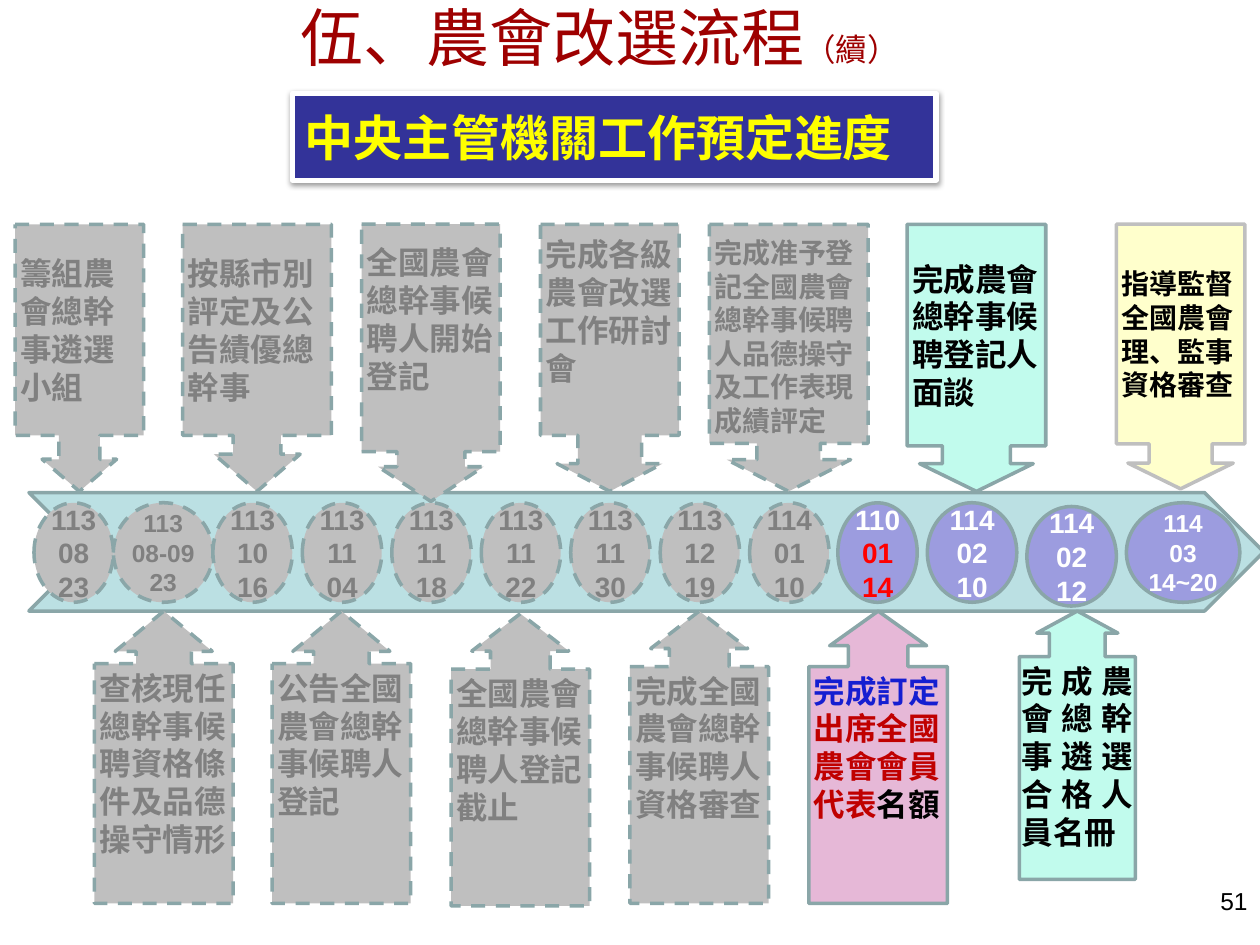
from dataclasses import dataclass
from lxml import etree
from pptx import Presentation
from pptx.dml.color import RGBColor
from pptx.enum.dml import MSO_LINE
from pptx.enum.shapes import MSO_SHAPE
from pptx.enum.text import MSO_ANCHOR, PP_ALIGN
from pptx.oxml.ns import qn
from pptx.util import Inches, Pt

DOWN, UP = MSO_SHAPE.DOWN_ARROW_CALLOUT, MSO_SHAPE.UP_ARROW_CALLOUT
OVAL, CHEVRON, RECTANGLE = MSO_SHAPE.OVAL, MSO_SHAPE.CHEVRON, MSO_SHAPE.RECTANGLE
TOP, MIDDLE = MSO_ANCHOR.TOP, MSO_ANCHOR.MIDDLE
LEFT, CENTER, RIGHT, JUSTIFY = PP_ALIGN.LEFT, PP_ALIGN.CENTER, PP_ALIGN.RIGHT, PP_ALIGN.JUSTIFY
DASH = MSO_LINE.DASH

PAST, PAST_TEXT, PURPLE, MINT, EDGE = "BFBFBF", "808080", "9C9CDF", "C1FBED", "8AA6A8"
BLACK, WHITE, RED = "000000", "FFFFFF", "FF0000"

DATES = [(0.27, 0.63, "113 08 23"), (0.9, 0.79, "113 08-09 23")]
DATES += [(1.69 + 0.71 * index, 0.63, date) for index, date in enumerate(
    ["113 10 16", "113 11 04", "113 11 18", "113 11 22", "113 11 30", "113 12 19", "114 01 10"])]
UPCOMING = [
    (6.65, 3.99, 0.63, "110 01 14", 16, [WHITE, RED, RED]),
    (7.36, 3.99, 0.71, "114 02 10", 16, [WHITE]),
    (8.15, 4.02, 0.71, "114 02 12", 16, [WHITE]),
    (8.94, 3.99, 0.9, "114 03 14~20", 14, [WHITE]),
]
PAST_ABOVE = [
    (0.12, 1.02, 2.12, (0.32, 0.29, 0.25, 0.79), "籌組農會總幹事遴選小組", 18, 0.04, 0.04),
    (1.45, 1.18, 2.12, (0.32, 0.29, 0.25, 0.79), "按縣市別評定及公告績優總幹事", 18, 0.04, 0.04),
    (2.87, 1.1, 2.2, (0.49, 0.38, 0.25, 0.82), "全國農會總幹事候聘人開始登記", 18, 0.04, 0.34),
    (4.29, 1.1, 2.12, (0.46, 0.38, 0.2, 0.79), "完成各級農會改選工作研討會", 18, 0.04, 0.34),
    (5.63, 1.26, 2.12, (0.4, 0.39, 0.2, 0.82),
     "完成准予登記全國農會總幹事候聘人品德操守及工作表現成績評定", 16, 0.08, 0.04),
]
PAST_BELOW = [
    (0.75, 4.85, (0.4, 0.35, 0.29, 0.82), "查核現任總幹事候聘資格條件及品德操守情形"),
    (2.16, 4.85, (0.4, 0.35, 0.29, 0.82), "公告全國農會總幹事候聘人登記"),
    (3.58, 4.87, (0.43, 0.35, 0.27, 0.81), "全國農會總幹事候聘人登記截止"),
    (5, 4.85, (0.43, 0.35, 0.27, 0.81), "完成全國農會總幹事候聘人資格審查"),
]


def color(value):
    return RGBColor.from_string(value)


@dataclass
class SlideBuilder:
    """Hold the fonts and the current slide, and draw each kind of element."""
    slide: object
    latin: str = "Arial"
    chinese: str = "Noto Sans CJK SC"

    def style(self, paragraph, size, text_color, font_name, bold=True, align=LEFT):
        paragraph.alignment = align
        font = paragraph.font
        font.size, font.bold = Pt(size), bold
        font.color.rgb = color(text_color)
        font.name = font_name
        etree.SubElement(font._element, qn("a:ea"), typeface=font_name)

    def frame(self, shape, anchor, margins):
        text_frame = shape.text_frame
        text_frame.word_wrap, text_frame.vertical_anchor = True, anchor
        (text_frame.margin_left, text_frame.margin_top,
         text_frame.margin_right, text_frame.margin_bottom) = map(Inches, margins)
        return text_frame

    def shape(self, kind, box, fill, edge=EDGE, width=2, dashed=False):
        shape = self.slide.shapes.add_shape(kind, *map(Inches, box))
        shape.shadow.inherit = False
        shape.fill.solid()
        shape.fill.fore_color.rgb = color(fill)
        shape.line.color.rgb = color(edge)
        shape.line.width = Pt(width)
        if dashed:
            shape.line.dash_style = DASH
        return shape

    def title(self, text, suffix):
        title = self.slide.shapes.title
        title.left, title.top, title.width, title.height = map(Inches, (0.98, -0.07, 7.56, 0.71))
        paragraph = self.frame(title, MIDDLE, (0.1, 0.05, 0.1, 0.05)).paragraphs[0]
        self.style(paragraph, 36, "9E0000", self.chinese, False, CENTER)
        paragraph.add_run().text = text
        run = paragraph.add_run()
        run.text, run.font.size = suffix, Pt(18)

    def banner(self, text):
        shape = self.shape(RECTANGLE, (2.32, 0.74, 5.11, 0.69), "333399", WHITE, 3)
        effects = shape._element.spPr.find(qn("a:effectLst"))
        shadow = etree.SubElement(effects, qn("a:outerShdw"), blurRad=str(Pt(3.1)),
                                  dist=str(Pt(1.6)), dir="5400000", rotWithShape="0")
        shade = etree.SubElement(shadow, qn("a:srgbClr"), val=BLACK)
        etree.SubElement(shade, qn("a:alpha"), val="38000")
        paragraph = self.frame(shape, MIDDLE, (0.1, 0.05, 0.1, 0.05)).paragraphs[0]
        paragraph.text = text
        self.style(paragraph, 28, "FFFF00", self.chinese)

    def date(self, box, date, fill, colors, size=16, dashed=False):
        shape = self.shape(OVAL, box, fill, dashed=dashed)
        text_frame = self.frame(shape, MIDDLE, (0.02, 0.01, 0.02, 0.01))
        text_frame.text = date.replace(" ", "\n")
        for index, paragraph in enumerate(text_frame.paragraphs):
            self.style(paragraph, size, colors[index % len(colors)], self.latin, align=CENTER)
            paragraph.line_spacing = Pt(size * 1.2)

    def callout(self, kind, box, adjustments, parts, fill, size=18, edge=EDGE, dashed=False,
                margins=(0.04, 0.04, 0.04, 0.04), align=LEFT):
        shape = self.shape(kind, box, fill, edge, dashed=dashed)
        for index, value in enumerate(adjustments):
            shape.adjustments[index] = value
        paragraph = self.frame(shape, MIDDLE if kind == DOWN else TOP, margins).paragraphs[0]
        self.style(paragraph, size, parts[0][1], self.chinese, align=align)
        paragraph.line_spacing = Pt(size * 1.2)
        for text, text_color in parts:
            run = paragraph.add_run()
            run.text = text
            if text_color != parts[0][1]:
                run.font.color.rgb = color(text_color)

    def page_number(self, number):
        box = self.slide.shapes.add_textbox(*map(Inches, (7.67, 6.98, 2.33, 0.52)))
        paragraph = self.frame(box, TOP, (0.1, 0.05, 0.1, 0.05)).paragraphs[0]
        paragraph.text = number
        self.style(paragraph, 14, BLACK, self.latin, False, RIGHT)


def main():
    presentation = Presentation()
    presentation.slide_width, presentation.slide_height = Inches(10), Inches(7.5)
    builder = SlideBuilder(presentation.slides.add_slide(presentation.slide_layouts[5]))

    builder.title("伍、農會改選流程", "（續）")
    builder.banner("中央主管機關工作預定進度")
    builder.page_number("51")
    builder.shape(CHEVRON, (0.23, 3.91, 9.8, 0.94), "BBE0E3")

    for left, width, date in DATES:
        builder.date((left, 3.99, width, 0.79), date, PAST, [PAST_TEXT],
                     14 if "-" in date else 16, dashed=True)
    for left, top, width, date, size, colors in UPCOMING:
        builder.date((left, top, width, 0.79), date, PURPLE, colors, size)

    for left, width, height, adjustments, text, size, above, below in PAST_ABOVE:
        builder.callout(DOWN, (left, 1.78, width, height), adjustments, [(text, PAST_TEXT)], PAST,
                        size, dashed=True, margins=(0.04, above, 0.04, below))
    for left, top, adjustments, text in PAST_BELOW:
        builder.callout(UP, (left, top, 1.1, 2.32), adjustments, [(text, PAST_TEXT)], PAST,
                        dashed=True)

    builder.callout(DOWN, (7.2, 1.78, 1.1, 2.12), (0.49, 0.41, 0.2, 0.83),
                    [("完成農會總幹事候聘登記人面談", BLACK)], MINT)
    builder.callout(DOWN, (8.86, 1.78, 1.02, 2.1), (0.49, 0.41, 0.2, 0.83),
                    [("指導監督全國農會理、監事資格審查", BLACK)], "FFFFCC", 16, PAST)
    builder.callout(UP, (6.42, 4.85, 1.1, 2.32), (0.43, 0.35, 0.25, 0.81),
                    [("完成訂定", "151ED1"), ("出席全國農會會員代表", "C00000"), ("名額", BLACK)],
                    "E6B8D7")
    builder.callout(UP, (8.09, 4.85, 0.92, 2.13), (0.48, 0.35, 0.19, 0.83),
                    [("完成農會總幹事遴選合格人員名冊", BLACK)], MINT,
                    margins=(0.02, 0.04, 0.02, 0.04), align=JUSTIFY)

    presentation.save("out.pptx")


if __name__ == "__main__":
    main()
